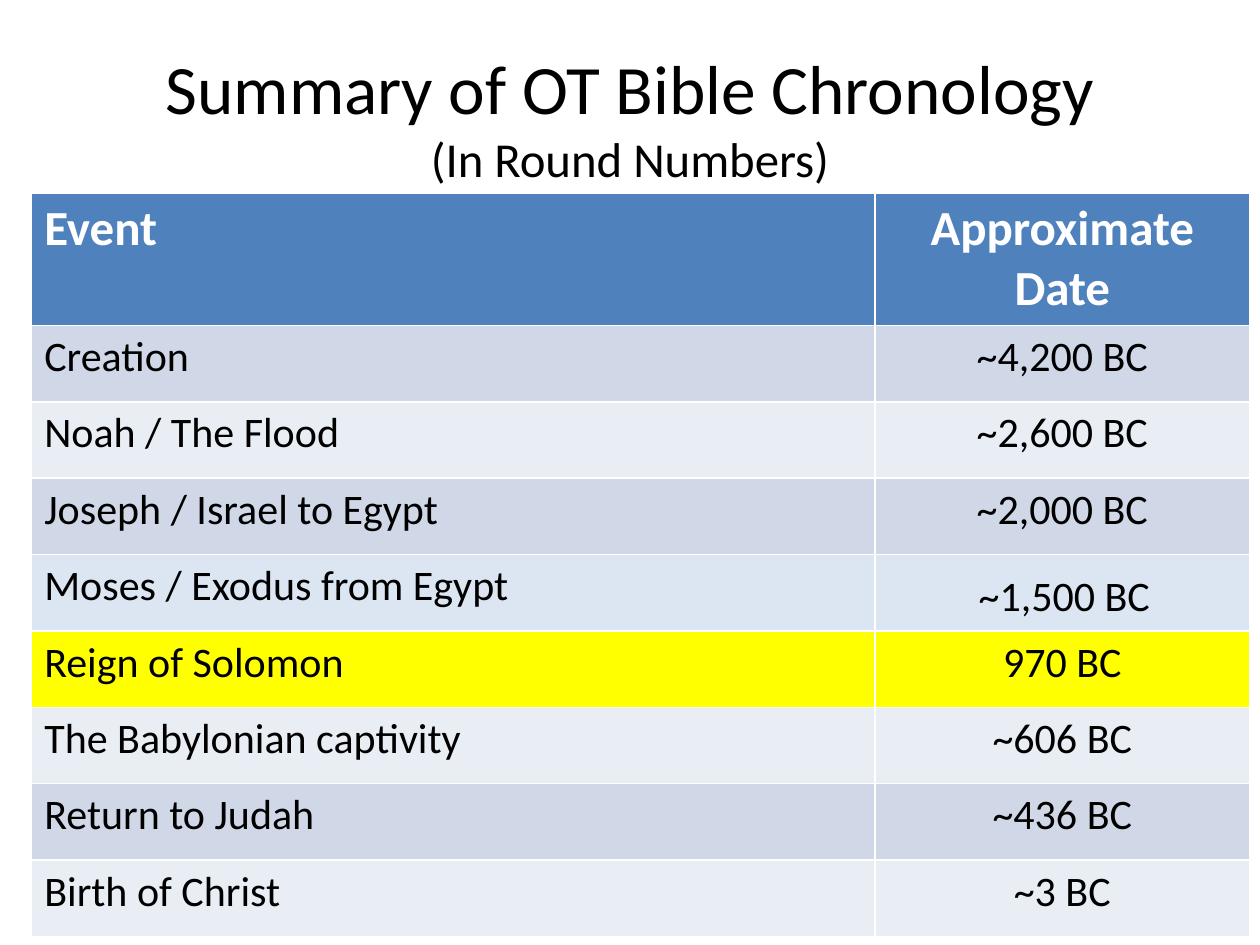
from dataclasses import dataclass

import pptx
import pptx.dml.color
import pptx.enum.text
import pptx.util
from pptx.util import Cm

ALIGN = pptx.enum.text.PP_ALIGN


@dataclass(frozen=True)
class Theme:
    font: str = "Calibri"
    title_size: float = 39.6
    subtitle_size: float = 27.9
    header_size: float = 28
    body_size: float = 24
    text: str = "000000"
    header_text: str = "FFFFFF"
    header: str = "4F81BD"
    dark_band: str = "D0D8E8"
    light_band: str = "E9EDF4"
    exodus: str = "DCE6F2"
    highlight: str = "FFFF00"


THEME = Theme()
EXODUS_DATE = "~1,500 BC"
EVENTS = [
    ("Creation", "~4,200 BC", THEME.dark_band),
    ("Noah / The Flood", "~2,600 BC", THEME.light_band),
    ("Joseph / Israel to Egypt", "~2,000 BC", THEME.dark_band),
    ("Moses / Exodus from Egypt", "", THEME.exodus),  # date stands in its own box
    ("Reign of Solomon", "970 BC", THEME.highlight),
    ("The Babylonian captivity", "~606 BC", THEME.light_band),
    ("Return to Judah", "~436 BC", THEME.dark_band),
    ("Birth of Christ", "~3 BC", THEME.light_band),
]


def rgb(value):
    return pptx.dml.color.RGBColor.from_string(value)


def style_font(font, size, color=THEME.text, bold=False):
    font.name = THEME.font
    font.size = pptx.util.Pt(size)
    font.color.rgb = rgb(color)
    font.bold = bold


def add_title(slide):
    title = slide.shapes.title
    title.left, title.top, title.width, title.height = Cm(1.27), Cm(0.76), Cm(22.86), Cm(3.18)
    frame = title.text_frame
    frame.text = "Summary of OT Bible Chronology\v(In Round Numbers)"
    frame.auto_size = pptx.enum.text.MSO_AUTO_SIZE.NONE
    frame.vertical_anchor = pptx.enum.text.MSO_ANCHOR.MIDDLE
    heading = frame.paragraphs[0]
    heading.alignment = ALIGN.CENTER
    for run, size in zip(heading.runs, (THEME.title_size, THEME.subtitle_size)):
        style_font(run.font, size)


def fill_row(row, texts, fill, size, color=THEME.text, bold=False):
    for cell, text, alignment in zip(row.cells, texts, (ALIGN.LEFT, ALIGN.CENTER)):
        cell.fill.solid()
        cell.fill.fore_color.rgb = rgb(fill)
        cell.text = text
        paragraph = cell.text_frame.paragraphs[0]
        paragraph.alignment = alignment
        style_font(paragraph.font, size, color, bold)
        for run in paragraph.runs:
            style_font(run.font, size, color, bold)


def add_chronology(slide):
    """Add the table; its default style draws the white cell borders."""
    table = slide.shapes.add_table(
        len(EVENTS) + 1, 2, Cm(0.64), Cm(3.89), Cm(24.55), Cm(14.94)).table
    for column, width in zip(table.columns, (17, 7.55)):
        column.width = Cm(width)
    header, *event_rows = table.rows
    header.height = Cm(2.64)
    fill_row(header, ("Event", "Approximate Date"), THEME.header,
             THEME.header_size, THEME.header_text, bold=True)
    for row, (event, date, fill) in zip(event_rows, EVENTS):
        row.height = Cm(1.54)
        fill_row(row, (event, date), fill, THEME.body_size)


def add_exodus_date(slide):
    frame = slide.shapes.add_textbox(Cm(19.48), Cm(11.35), Cm(3.99), Cm(1.27)).text_frame
    frame.word_wrap = False
    frame.auto_size = pptx.enum.text.MSO_AUTO_SIZE.SHAPE_TO_FIT_TEXT
    frame.text = EXODUS_DATE
    style_font(frame.paragraphs[0].runs[0].font, THEME.body_size)


def main():
    presentation = pptx.Presentation()
    presentation.slide_width, presentation.slide_height = Cm(25.4), Cm(19.05)
    slide = presentation.slides.add_slide(presentation.slide_layouts.get_by_name("Title Only"))
    add_title(slide)
    add_chronology(slide)
    add_exodus_date(slide)
    presentation.save("out.pptx")


if __name__ == "__main__":
    main()
